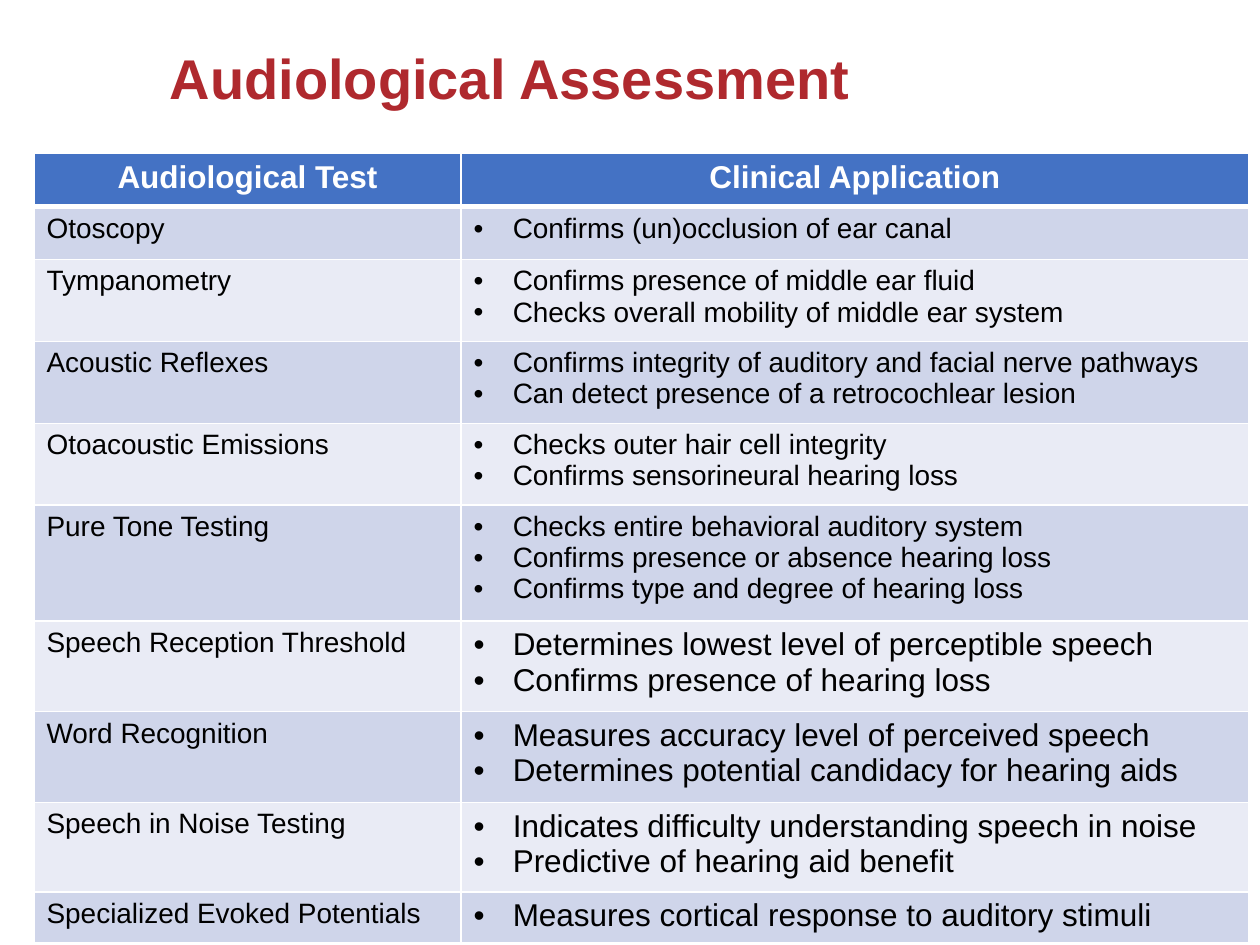
"""Build the Audiological Assessment slide with its table of tests."""
from lxml import etree
from pptx import Presentation
from pptx.dml.color import RGBColor
from pptx.enum.text import MSO_AUTO_SIZE, PP_ALIGN
from pptx.oxml.ns import qn
from pptx.util import Inches, Pt

CENTER = PP_ALIGN.CENTER
FIT_SHAPE = MSO_AUTO_SIZE.SHAPE_TO_FIT_TEXT
FONT = "Arial"
COLORS = {
    "title": "AF292E",
    "header": "4472C4",
    "band_dark": "CFD5EA",
    "band_light": "E9EBF5",
    "white": "FFFFFF",
    "black": "000000",
}
HEADINGS = ["Audiological Test", "Clinical Application"]
TESTS = [
    ("Otoscopy", 0.42, 16, ["Confirms (un)occlusion of ear canal"]),
    ("Tympanometry", 0.65, 16, [
        "Confirms presence of middle ear fluid",
        "Checks overall mobility of middle ear system"]),
    ("Acoustic Reflexes", 0.65, 16, [
        "Confirms integrity of auditory and facial nerve pathways",
        "Can detect presence of a retrocochlear lesion"]),
    ("Otoacoustic Emissions", 0.65, 16, [
        "Checks outer hair cell integrity",
        "Confirms sensorineural hearing loss"]),
    ("Pure Tone Testing", 0.92, 16, [
        "Checks entire behavioral auditory system",
        "Confirms presence or absence hearing loss",
        "Confirms type and degree of hearing loss"]),
    ("Speech Reception Threshold", 0.72, 18, [
        "Determines lowest level of perceptible speech",
        "Confirms presence of hearing loss"]),
    ("Word Recognition", 0.72, 18, [
        "Measures accuracy level of perceived speech",
        "Determines potential candidacy for hearing aids"]),
    ("Speech in Noise Testing", 0.71, 18, [
        "Indicates difficulty understanding speech in noise",
        "Predictive of hearing aid benefit"]),
    ("Specialized Evoked Potentials", 0.4, 18, [
        "Measures cortical response to auditory stimuli"]),
]


def style_paragraph(paragraph, size, color, bold=False):
    for run in paragraph.runs:
        run.font.name = FONT
        run.font.size = Pt(size)
        run.font.bold = bold
        run.font.color.rgb = RGBColor.from_string(COLORS[color])


def style_cell(cell, fill, top=1, bottom=1):
    properties = cell._tc.get_or_add_tcPr()
    for side, width in (("L", 1), ("R", 1), ("T", top), ("B", bottom)):
        line = etree.SubElement(properties, qn(f"a:ln{side}"), w=str(Pt(width)))
        solid = etree.SubElement(line, qn("a:solidFill"))
        etree.SubElement(solid, qn("a:srgbClr"), val=COLORS["white"])
    cell.fill.solid()
    cell.fill.fore_color.rgb = RGBColor.from_string(COLORS[fill])


presentation = Presentation()
presentation.slide_width = Inches(10)
presentation.slide_height = Inches(7.5)
slide = presentation.slides.add_slide(presentation.slide_layouts[6])

title = slide.shapes.add_textbox(Inches(1.25), Inches(0.3), Inches(5.79), Inches(0.64))
title.text_frame.word_wrap = True
title.text_frame.auto_size = FIT_SHAPE
title.text_frame.text = "Audiological Assessment"
style_paragraph(title.text_frame.paragraphs[0], 32, "title", bold=True)

row_heights = [0.42] + [height for _, height, _, _ in TESTS]
table = slide.shapes.add_table(
    len(row_heights), len(HEADINGS),
    Inches(0.27), Inches(1.22), Inches(9.64), Inches(sum(row_heights))).table
for column, width in zip(table.columns, (3.39, 6.25)):
    column.width = Inches(width)
for row, height in zip(table.rows, row_heights):
    row.height = Inches(height)

for column_index, heading in enumerate(HEADINGS):
    cell = table.cell(0, column_index)
    style_cell(cell, "header", bottom=3)
    cell.text_frame.text = heading
    paragraph = cell.text_frame.paragraphs[0]
    paragraph.alignment = CENTER
    style_paragraph(paragraph, 18, "white", bold=True)

for row_index, (test, _, size, applications) in enumerate(TESTS, start=1):
    test_cell = table.cell(row_index, 0)
    application_cell = table.cell(row_index, 1)
    for cell in (test_cell, application_cell):
        style_cell(cell, "band_dark" if row_index % 2 else "band_light",
                   top=3 if row_index == 1 else 1)
    test_cell.text_frame.text = test
    style_paragraph(test_cell.text_frame.paragraphs[0], 16, "black")
    application_cell.text_frame.text = "\n".join(applications)
    for paragraph in application_cell.text_frame.paragraphs:
        properties = paragraph._p.get_or_add_pPr()
        properties.set("marL", str(Inches(0.31)))
        properties.set("indent", str(-Inches(0.31)))
        etree.SubElement(properties, qn("a:buFont"), typeface=FONT)
        etree.SubElement(properties, qn("a:buChar"), char="•")
        style_paragraph(paragraph, size, "black")

presentation.save("out.pptx")
